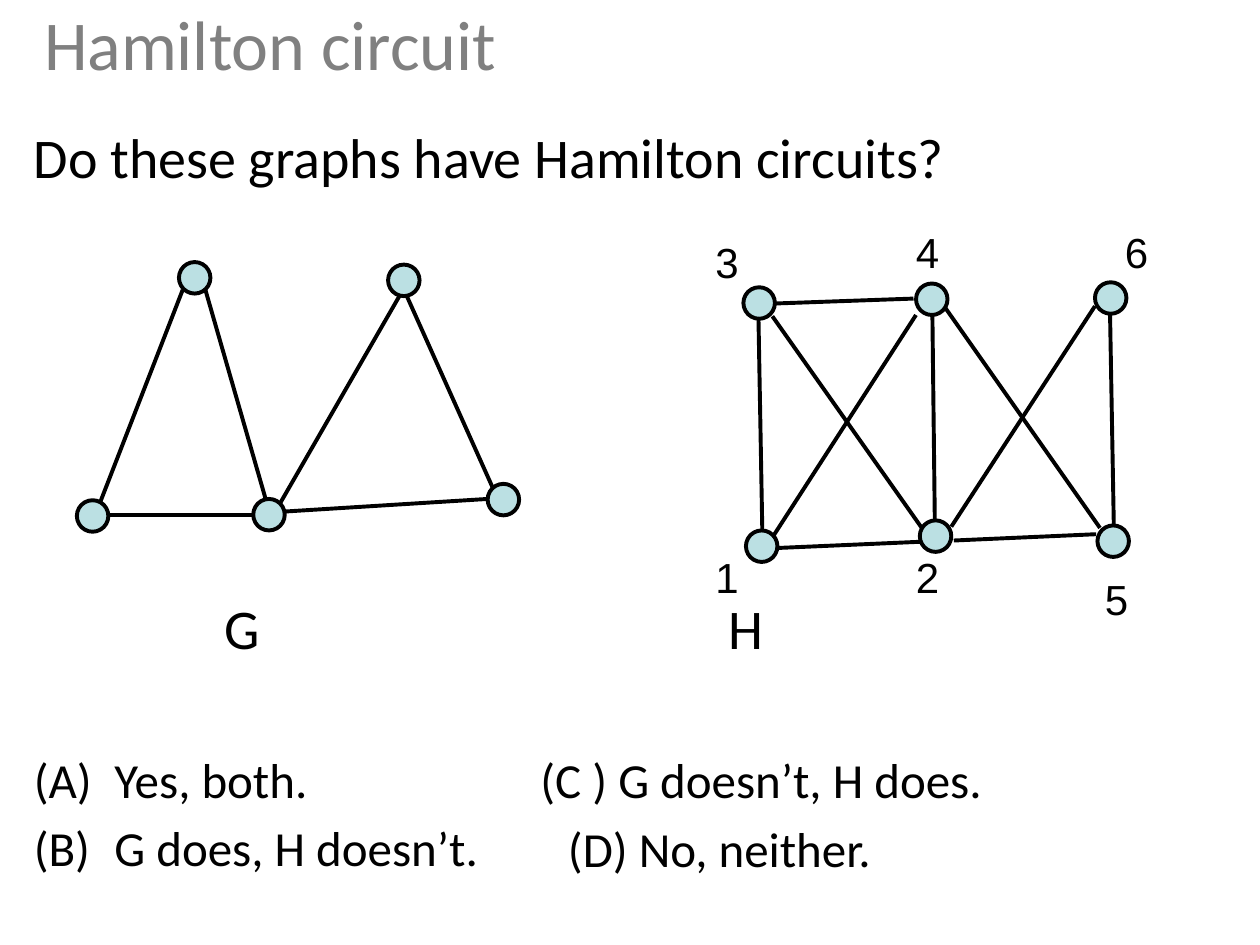
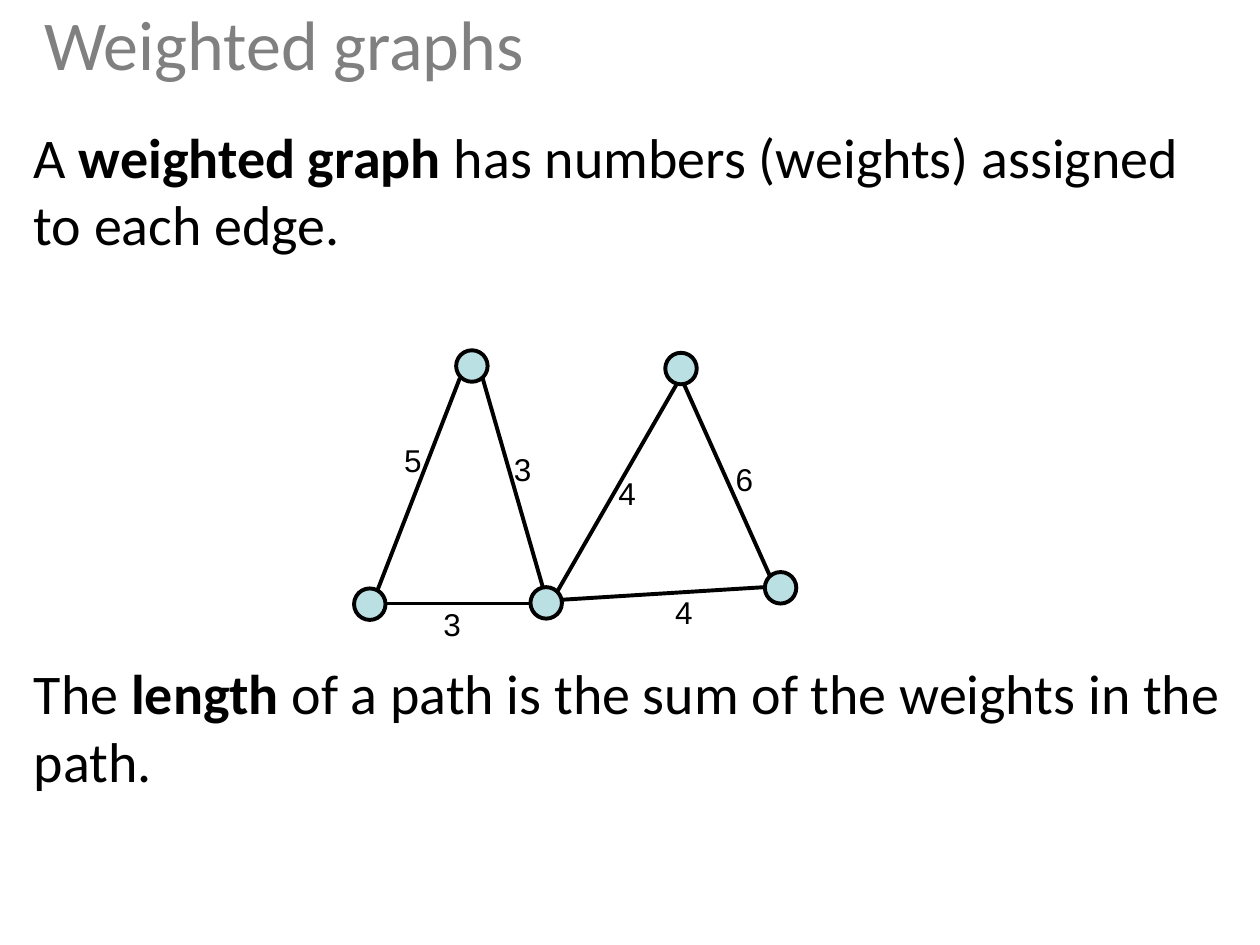
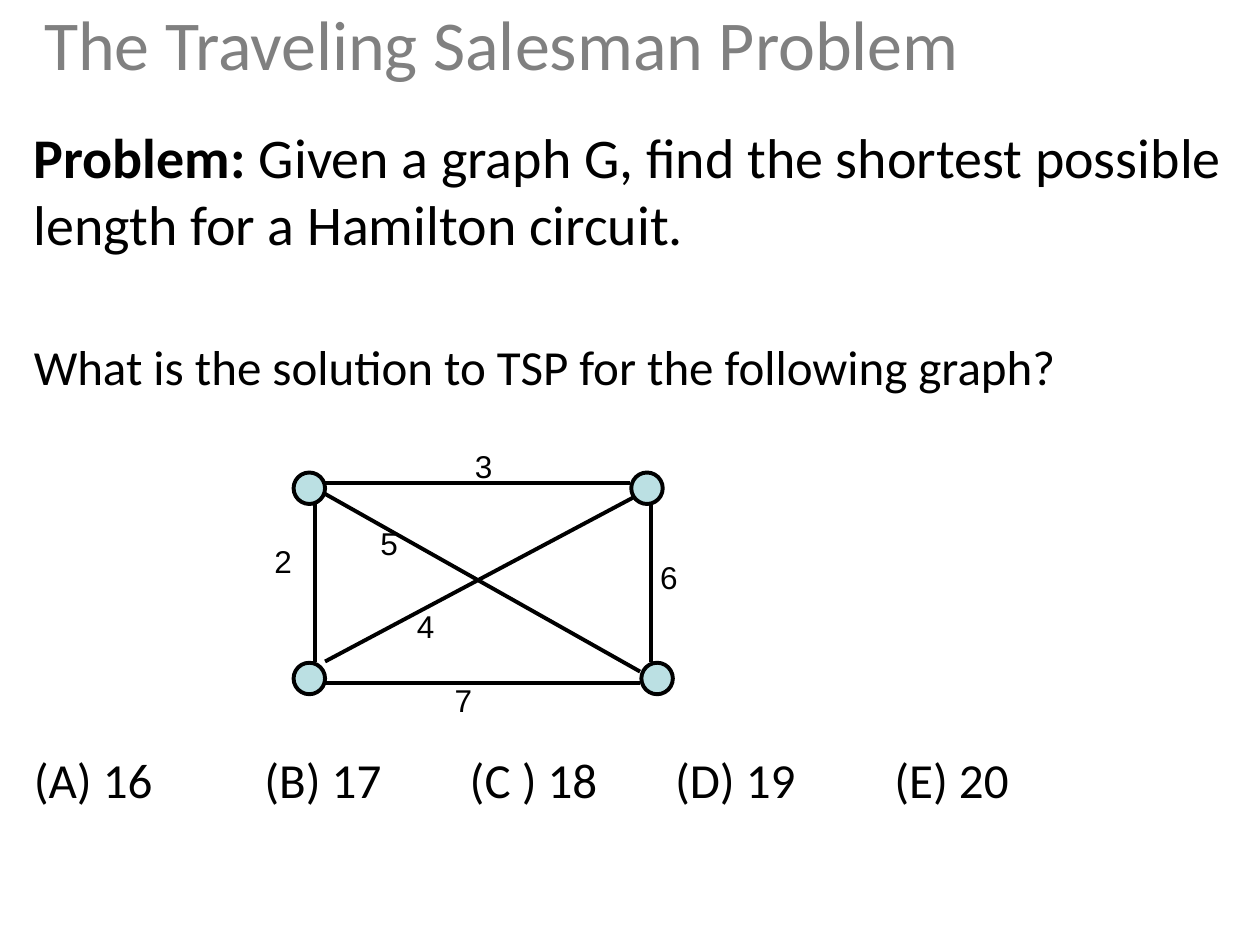
from lxml import etree
from pptx import Presentation
from pptx.dml.color import RGBColor
from pptx.enum.shapes import MSO_CONNECTOR, MSO_SHAPE
from pptx.enum.text import MSO_ANCHOR, MSO_AUTO_SIZE, PP_ALIGN
from pptx.oxml.ns import qn
from pptx.util import Inches, Pt

STRAIGHT, ELLIPSE = MSO_CONNECTOR.STRAIGHT, MSO_SHAPE.OVAL
MIDDLE, LEFT, NO_FIT = MSO_ANCHOR.MIDDLE, PP_ALIGN.LEFT, MSO_AUTO_SIZE.NONE

# Shared look
BLACK, GRAY, NODE_FILL = "000000", "808080", "BBE0E3"
NODE_SIZE, LINE_WIDTH = 0.25, 2.25
BODY_LEFT, BODY_WIDTH = 0.17, 9.67
ANSWER_TOP, ANSWER_INDENT, ANSWER_GAP = 5.9, 0.64, 5.3
TITLE = {"name": "Calibri", "size": 40, "color": GRAY, "bold": False}
BODY = {"name": "Calibri", "size": 32, "color": BLACK}
ANSWER = {**BODY, "size": 28}
VERTEX_LABEL = {"name": "Arial", "size": 24, "color": BLACK}
WEIGHT_LABEL = {**VERTEX_LABEL, "size": 18}

# Graphs: left and top of each node, then both ends of each edge
TWO_TRIANGLES = {
    "nodes": [(3.08, 2.1), (1.42, 2.08), (0.61, 3.97), (2.01, 3.96), (3.87, 3.84)],
    "edges": [(0.79, 4, 1.45, 2.3), (1.63, 2.3, 2.12, 4), (3.17, 2.35, 2.22, 4),
              (2.01, 4.09, 0.86, 4.09), (3.91, 3.87, 3.22, 2.33),
              (3.87, 3.96, 2.26, 4.06)],
}
SIX_VERTICES = {
    "nodes": [(5.9, 2.28), (5.92, 4.21), (7.27, 2.25), (7.3, 4.13),
              (8.69, 2.24), (8.71, 4.17)],
    "edges": [(6.05, 4.21, 6.02, 2.53), (7.42, 4.18, 7.4, 2.5),
              (8.84, 4.17, 8.81, 2.49), (6.14, 4.25, 7.27, 2.5),
              (6.13, 2.51, 7.33, 4.21), (7.5, 2.44, 8.73, 4.19),
              (7.55, 4.18, 8.69, 2.43), (6.16, 4.35, 7.3, 4.3),
              (7.57, 4.29, 8.7, 4.24), (6.12, 2.41, 7.25, 2.37)],
}
FOUR_CITIES = {
    "nodes": [(2.33, 3.75), (2.33, 5.26), (5.01, 3.75), (5.09, 5.26)],
    "edges": [(2.58, 3.83, 5, 3.83), (5.17, 5.25, 5.17, 4), (2.5, 5.25, 2.5, 4),
              (2.58, 5.25, 5.08, 3.92), (2.58, 3.92, 5.08, 5.33),
              (2.58, 5.42, 5.08, 5.42)],
}

# Texts: top and (text, bold) runs; labels and answers: text with left and top
# Graphs: graph with its shift to the right and down
SLIDES = [
    {
        "title": "Hamilton circuit",
        "texts": [(0.92, [("Do these graphs have Hamilton circuits?", False)], BODY)],
        "names": [("G", 1.68, 4.66), ("H", 5.68, 4.66)],
        "numbered": ["Yes, both.", "G does, H doesn’t."],
        "answers": [("(C ) G doesn’t, H does.", 4.19, ANSWER_TOP),
                    ("(D) No, neither.", 4.41, ANSWER_TOP + 0.55)],
        "graphs": [(TWO_TRIANGLES, 0, 0), (SIX_VERTICES, 0, 0)],
        "vertices": [("1", 5.58, 4.33), ("2", 7.17, 4.33), ("3", 5.58, 1.83),
                     ("4", 7.17, 1.75), ("5", 8.67, 4.5), ("6", 8.83, 1.75)],
    },
    {
        "title": "Weighted graphs",
        "texts": [
            (0.92, [("A ", False), ("weighted graph ", True),
                    ("has numbers (weights) assigned to each edge.", False)], BODY),
            (5.18, [("The ", False), ("length", True),
                    (" of a path is the sum of the weights in the path.", False)], BODY),
        ],
        "graphs": [(TWO_TRIANGLES, 2.2, 0.7)],
        "weights": [("5", 3.11, 3.45), ("3", 3.98, 3.52), ("3", 3.42, 4.75),
                    ("4", 5.26, 4.66), ("6", 5.74, 3.6), ("4", 4.81, 3.71)],
    },
    {
        "title": "The Traveling Salesman Problem",
        "texts": [
            (0.92, [("Problem: ", True),
                    ("Given a graph G, find the shortest possible length"
                     " for a Hamilton circuit.", False)], BODY),
            (2.62, [("What is the solution to TSP for the following graph?", False)],
             ANSWER),
        ],
        "answers": [("(A) 16", 0.17, ANSWER_TOP), ("(B) 17", 2, ANSWER_TOP),
                    ("(C ) 18", 3.63, ANSWER_TOP), ("(D) 19", 5.26, ANSWER_TOP),
                    ("(E) 20", 7, ANSWER_TOP)],
        "graphs": [(FOUR_CITIES, 0, 0)],
        "weights": [("2", 2.08, 4.25), ("3", 3.67, 3.5), ("5", 2.92, 4.11),
                    ("4", 3.21, 4.77), ("7", 3.51, 5.36), ("6", 5.14, 4.38)],
    },
]

# Labels by kind: text style, box width and height
LABEL_KINDS = {
    "names": (BODY, 0.6, 0.64),
    "answers": (ANSWER, 4.5, 0.57),
    "vertices": (VERTEX_LABEL, 0.39, 0.5),
    "weights": (WEIGHT_LABEL, 0.34, 0.4),
}


def rgb(color):
    return RGBColor.from_string(color)


def style_font(font, style):
    for key, value in style.items():
        if key == "color":
            font.color.rgb = rgb(value)
        else:
            setattr(font, key, Pt(value) if key == "size" else value)


def add_text(slide, left, top, width, height, paragraphs, style):
    """Add a text box; each paragraph is a list of (text, bold) runs."""
    box = slide.shapes.add_textbox(*map(Inches, (left, top, width, height)))
    frame = box.text_frame
    frame.word_wrap = True
    for index, runs in enumerate(paragraphs):
        paragraph = frame.add_paragraph() if index else frame.paragraphs[0]
        for text, bold in runs:
            run = paragraph.add_run()
            run.text = text
            style_font(run.font, {**style, "bold": bold})
    return frame


def add_title(slide, text):
    title = slide.shapes.title
    title.left, title.top, title.width, title.height = map(Inches, (0.25, 0, 9.58, 0.67))
    frame = title.text_frame
    frame.text = text
    frame.auto_size = NO_FIT
    frame.vertical_anchor = MIDDLE
    frame.paragraphs[0].alignment = LEFT
    style_font(frame.paragraphs[0].runs[0].font, TITLE)


def add_numbered(slide, answers):
    """Add answers lettered (A), (B) and so on."""
    frame = add_text(slide, BODY_LEFT, ANSWER_TOP, 4, 1.12,
                     [[(answer, False)] for answer in answers], ANSWER)
    for index, paragraph in enumerate(frame.paragraphs):
        properties = paragraph._p.get_or_add_pPr()
        properties.set("marL", str(Inches(ANSWER_INDENT)))
        properties.set("indent", str(-Inches(ANSWER_INDENT)))
        bullet_font = etree.SubElement(properties, qn("a:buFont"))
        bullet_font.set("typeface", ANSWER["name"])
        etree.SubElement(properties, qn("a:buAutoNum")).set("type", "alphaUcParenBoth")
        if index:
            paragraph.space_before = Pt(ANSWER_GAP)


def style_line(line):
    line.color.rgb = rgb(BLACK)
    line.width = Pt(LINE_WIDTH)


def add_graph(slide, graph, right, down):
    for x1, y1, x2, y2 in graph["edges"]:
        ends = (x1 + right, y1 + down, x2 + right, y2 + down)
        edge = slide.shapes.add_connector(STRAIGHT, *map(Inches, ends))
        style_line(edge.line)
        etree.SubElement(edge._element.spPr, qn("a:effectLst"))
    for left, top in graph["nodes"]:
        place = (left + right, top + down, NODE_SIZE, NODE_SIZE)
        node = slide.shapes.add_shape(ELLIPSE, *map(Inches, place))
        node.shadow.inherit = False
        node.fill.solid()
        node.fill.fore_color.rgb = rgb(NODE_FILL)
        style_line(node.line)


def build_slide(presentation, content):
    slide = presentation.slides.add_slide(presentation.slide_layouts[5])
    add_title(slide, content["title"])
    for top, runs, style in content["texts"]:
        add_text(slide, BODY_LEFT, top, BODY_WIDTH, 1.19, [runs], style)
    if "numbered" in content:
        add_numbered(slide, content["numbered"])
    for graph, right, down in content["graphs"]:
        add_graph(slide, graph, right, down)
    for kind, (style, width, height) in LABEL_KINDS.items():
        for text, left, top in content.get(kind, []):
            add_text(slide, left, top, width, height, [[(text, False)]], style)


def main():
    presentation = Presentation()
    presentation.slide_width, presentation.slide_height = Inches(10), Inches(7.5)
    for content in SLIDES:
        build_slide(presentation, content)
    presentation.save("out.pptx")


if __name__ == "__main__":
    main()
